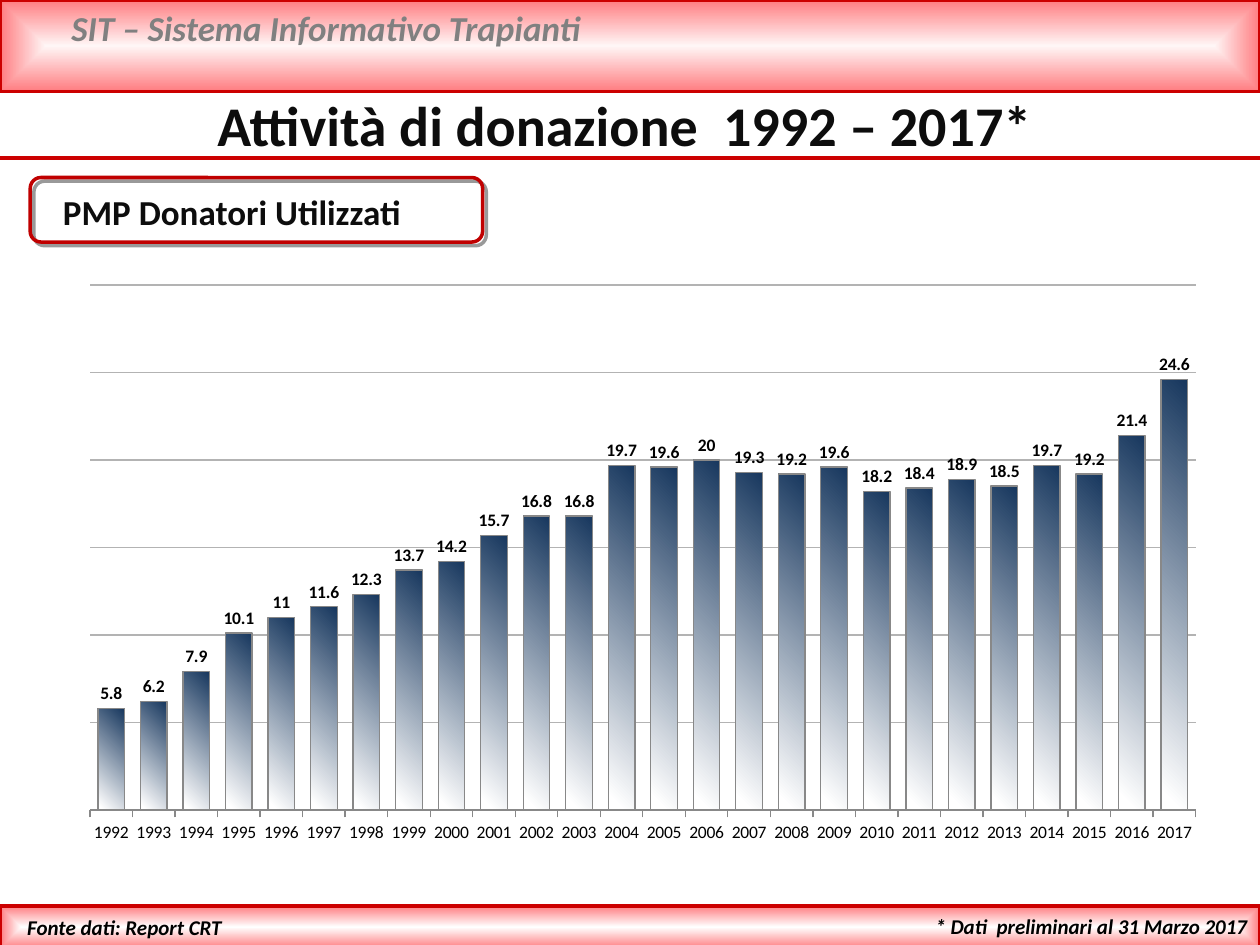
"""Build the organ donation activity slide with its yearly column chart."""
from dataclasses import dataclass

from lxml.etree import SubElement
from pptx import Presentation
from pptx.chart.data import CategoryChartData
from pptx.dml.color import RGBColor
from pptx.enum.chart import XL_CHART_TYPE, XL_LABEL_POSITION, XL_TICK_LABEL_POSITION, XL_TICK_MARK
from pptx.enum.shapes import MSO_CONNECTOR, MSO_SHAPE
from pptx.enum.text import MSO_ANCHOR, PP_ALIGN
from pptx.oxml.ns import qn
from pptx.util import Cm, Pt

RED = RGBColor(0xCC, 0x00, 0x00)
DARK_RED = RGBColor(0xC0, 0x00, 0x00)
PINK = RGBColor(0xFF, 0x7C, 0x80)
PALE = RGBColor(0xFF, 0xF6, 0xF6)
WHITE = RGBColor(0xFF, 0xFF, 0xFF)
BLACK = RGBColor(0x00, 0x00, 0x00)
INK = RGBColor(0x0D, 0x0D, 0x0D)
GRAY = RGBColor(0x80, 0x80, 0x80)
EDGE = RGBColor(0x88, 0x88, 0x88)
GRID = RGBColor(0xB3, 0xB3, 0xB3)
NAVY = RGBColor(0x17, 0x37, 0x5E)

FONT = "Calibri"
WIDE, HIGH = 25.4, 19.05
YEARS = range(1992, 2018)
RATES = (5.8, 6.2, 7.9, 10.1, 11, 11.6, 12.3, 13.7, 14.2, 15.7, 16.8, 16.8, 19.7,
         19.6, 20, 19.3, 19.2, 19.6, 18.2, 18.4, 18.9, 18.5, 19.7, 19.2, 21.4, 24.6)


@dataclass
class Box:
    left: float
    top: float
    width: float
    height: float

    def place(self) -> tuple:
        return Cm(self.left), Cm(self.top), Cm(self.width), Cm(self.height)


@dataclass
class Band:
    box: Box
    center: RGBColor


@dataclass
class Label:
    box: Box
    text: str
    size: int
    color: RGBColor = BLACK
    italic: bool = True
    align: PP_ALIGN = PP_ALIGN.LEFT
    inset: float = 0.25
    rise: float = 0.13


BANDS = (
    Band(Box(0, 0, WIDE, 1.85), PALE),
    Band(Box(0, 18.26, WIDE, 0.86), WHITE),
)
LABELS = (
    Label(Box(1.19, 0, 22.81, 1.12), "SIT – Sistema Informativo Trapianti", 20, GRAY),
    Label(Box(14.91, 18.29, 10.49, 0.76), "* Dati  preliminari al 31 Marzo 2017", 12,
          align=PP_ALIGN.RIGHT),
    Label(Box(0.3, 18.31, 8.15, 0.76), "Fonte dati: Report CRT", 12),
    Label(Box(0.64, 3.58, 9.27, 1.3), "PMP Donatori Utilizzati", 20, INK, False,
          inset=0.63, rise=0.26),
)
TITLE = Label(Box(0, 1.7, 25.2, 1.63), "Attività di donazione  1992 – 2017*", 32, INK,
              False, PP_ALIGN.CENTER)
FRAME = Box(0.61, 3.58, 9.12, 1.3)
CHART = Box(1.35, 5.51, 23.22, 11.76)
PLOT = {"x": 0.02, "y": 0.02, "w": 0.96, "h": 0.9}


def shade(fill, start: RGBColor, end: RGBColor, stop: float = 1.0) -> None:
    fill.gradient()
    for point, color, place in zip(fill.gradient_stops, (start, end), (0, stop)):
        point.color.rgb = color
        point.position = place


def write(shape, label: Label) -> None:
    frame = shape.text_frame
    frame.word_wrap = True
    frame.vertical_anchor = MSO_ANCHOR.TOP
    frame.margin_left, frame.margin_top = Cm(label.inset), Cm(label.rise)
    line = frame.paragraphs[0]
    line.alignment = label.align
    run = line.add_run()
    run.text = label.text
    font = run.font
    font.name, font.size = FONT, Pt(label.size)
    font.bold, font.italic = True, label.italic
    font.color.rgb = label.color


def draw_band(shapes, band: Band) -> None:
    shape = shapes.add_shape(MSO_SHAPE.RECTANGLE, *band.box.place())
    shape.shadow.inherit = False
    shade(shape.fill, band.center, PINK)
    grad = shape._element.spPr.find(qn("a:gradFill"))
    grad.remove(grad.find(qn("a:lin")))
    path = SubElement(grad, qn("a:path"), path="shape")
    SubElement(path, qn("a:fillToRect"), l="50000", t="50000", r="50000", b="50000")
    shape.line.color.rgb = RED
    shape.line.width = Pt(2)


def draw_rule(shapes, top: float) -> None:
    rule = shapes.add_connector(MSO_CONNECTOR.STRAIGHT, 0, Cm(top), Cm(WIDE), Cm(top))
    rule.line.color.rgb = RED
    rule.line.width = Pt(2)
    SubElement(rule._element.spPr, qn("a:effectLst"))


def draw_frame(shapes, box: Box) -> None:
    shape = shapes.add_shape(MSO_SHAPE.ROUNDED_RECTANGLE, *box.place())
    shape.shadow.inherit = False
    shape.fill.background()
    shape.line.color.rgb = DARK_RED
    shape.line.width = Pt(2)
    effects = shape._element.spPr.find(qn("a:effectLst"))
    shadow = SubElement(effects, qn("a:outerShdw"), blurRad="0", dist=str(Pt(3)),
                        dir="2700000", algn="tl", rotWithShape="0")
    color = SubElement(shadow, qn("a:srgbClr"), val=str(BLACK))
    SubElement(color, qn("a:alpha"), val="40000")


def set_plot(chart) -> None:
    area = chart._chartSpace.chart.plotArea
    layout = area.find(qn("c:layout"))
    if layout is None:
        layout = SubElement(area, qn("c:layout"))
        area.insert(0, layout)
    manual = SubElement(layout, qn("c:manualLayout"))
    SubElement(manual, qn("c:layoutTarget"), val="inner")
    for side in "xy":
        SubElement(manual, qn(f"c:{side}Mode"), val="edge")
    for key, part in PLOT.items():
        SubElement(manual, qn(f"c:{key}"), val=str(part))


def draw_chart(shapes, box: Box) -> None:
    data = CategoryChartData()
    data.categories = [str(year) for year in YEARS]
    data.add_series("Series 1", RATES)
    chart = shapes.add_chart(XL_CHART_TYPE.COLUMN_CLUSTERED, *box.place(), data).chart
    chart.has_legend = chart.has_title = False
    chart.font.name, chart.font.size = FONT, Pt(10)
    chart.font.color.rgb = BLACK
    set_plot(chart)

    scale = chart.value_axis
    scale.minimum_scale, scale.maximum_scale, scale.major_unit = 0, 30, 5
    scale.has_major_gridlines = True
    scale.major_gridlines.format.line.color.rgb = GRID
    scale.major_gridlines.format.line.width = Pt(0.75)
    scale.visible = False

    axis = chart.category_axis
    axis.major_tick_mark = XL_TICK_MARK.OUTSIDE
    axis.tick_label_position = XL_TICK_LABEL_POSITION.LOW
    axis.format.line.color.rgb = EDGE

    plot = chart.plots[0]
    plot.gap_width, plot.overlap, plot.vary_by_categories = 60, -20, False
    plot.has_data_labels = True
    labels = plot.data_labels
    labels.show_value = True
    labels.position = XL_LABEL_POSITION.OUTSIDE_END
    labels.font.name, labels.font.size, labels.font.bold = FONT, Pt(10), True
    labels.font.color.rgb = BLACK

    bars = plot.series[0].format
    shade(bars.fill, NAVY, WHITE, 0.96)
    bars.fill.gradient_angle = 225
    bars.line.color.rgb = EDGE
    bars.line.width = Pt(0.75)


def main() -> None:
    deck = Presentation()
    deck.slide_width, deck.slide_height = Cm(WIDE), Cm(HIGH)
    slide = deck.slides.add_slide(deck.slide_layouts[5])
    shapes = slide.shapes
    for band in BANDS:
        draw_band(shapes, band)
    draw_rule(shapes, 3.18)
    title = shapes.title
    title.left, title.top, title.width, title.height = TITLE.box.place()
    write(title, TITLE)
    for label in LABELS:
        write(shapes.add_textbox(*label.box.place()), label)
    draw_frame(shapes, FRAME)
    draw_chart(shapes, CHART)
    deck.save("out.pptx")


if __name__ == "__main__":
    main()
